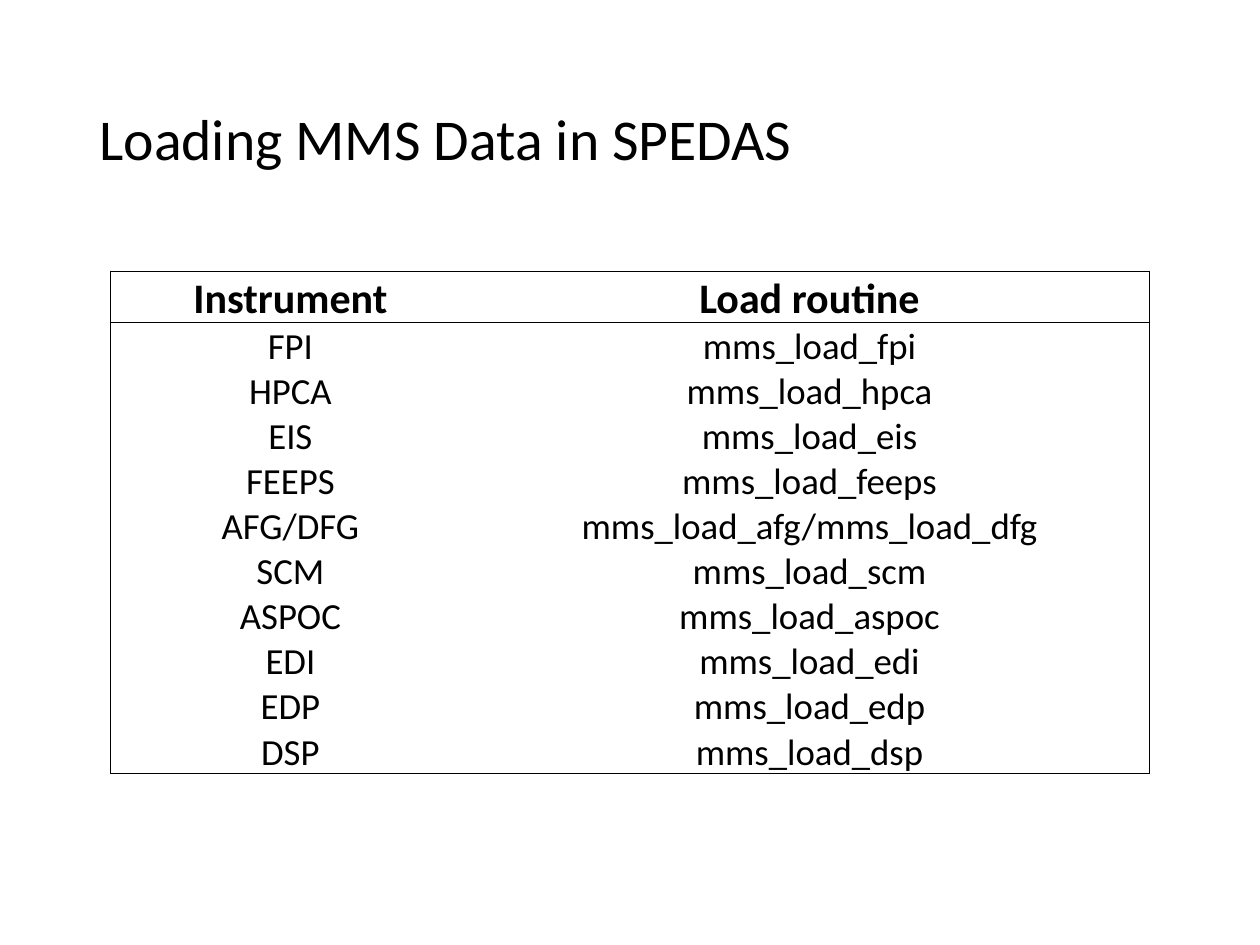
from lxml.etree import SubElement
from pptx import Presentation
from pptx.dml.color import RGBColor
from pptx.enum.text import MSO_ANCHOR as Anchor, PP_ALIGN as Align
from pptx.oxml import parse_xml
from pptx.oxml.ns import nsdecls, qn
from pptx.util import Inches, Pt

BLACK = RGBColor(0, 0, 0)
WHITE = RGBColor(255, 255, 255)
FONT = "Calibri"
GRID = Inches(0.1)
TITLE_BOX = (6.9, 4, 86.2, 14.5)
TABLE_BOX = (8.8, 21.5, 82.4, 39.9)
INSTRUMENT_WIDTH = 28.5
HEADER_HEIGHT = 4.1
HEADER = ("Instrument", "Load routine")
INSTRUMENTS = ("FPI", "HPCA", "EIS", "FEEPS", "AFG/DFG",
               "SCM", "ASPOC", "EDI", "EDP", "DSP")


def grid(units):
    """Turn a number of grid units into a length."""
    return round(units * GRID)


def load_routine(instrument):
    """Name the routine or routines that load an instrument."""
    return "/".join(f"mms_load_{name.lower()}" for name in instrument.split("/"))


def format_paragraph(paragraph, size, spacing, bold=False, align=Align.LEFT):
    """Set the spacing, alignment and font of a paragraph."""
    paragraph.line_spacing = spacing
    paragraph.alignment = align
    for run in paragraph.runs:
        run.font.name = FONT
        run.font.size = Pt(size)
        run.font.bold = bold
        run.font.color.rgb = BLACK


def set_borders(cell, visible):
    """Draw the visible sides of a cell and clear the others."""
    properties = cell._tc.get_or_add_tcPr()
    for index, side in enumerate("LRTB"):
        line = parse_xml(f'<a:ln{side} {nsdecls("a")} w="{Pt(0.5)}"/>')
        if side in visible:
            fill = SubElement(line, qn("a:solidFill"))
            SubElement(fill, qn("a:srgbClr"), val=str(BLACK))
        else:
            SubElement(line, qn("a:noFill"))
        properties.insert(index, line)


def add_title(slide, box, text):
    """Place the slide title in its box."""
    text_frame = slide.shapes.add_textbox(*map(grid, box)).text_frame
    text_frame.word_wrap = True
    text_frame.vertical_anchor = Anchor.MIDDLE
    text_frame.text = text
    format_paragraph(text_frame.paragraphs[0], 33, 0.9)


def fill_cell(cell, text, is_header, borders):
    """Write and format one table cell."""
    cell.text = text
    cell.vertical_anchor = Anchor.BOTTOM
    cell.margin_left = cell.margin_right = cell.margin_top = Inches(0.01)
    cell.margin_bottom = 0
    cell.fill.background()
    set_borders(cell, borders)
    format_paragraph(cell.text_frame.paragraphs[0], 24 if is_header else 21,
                     0.93, is_header, Align.CENTER)


def add_routine_table(slide, box):
    """Place the table of instruments and load routines in its box."""
    rows = [HEADER] + [(name, load_routine(name)) for name in INSTRUMENTS]
    width, height = box[2:]
    table = slide.shapes.add_table(len(rows), len(HEADER), *map(grid, box)).table
    table.first_row = table.horz_banding = False
    table.columns[0].width = grid(INSTRUMENT_WIDTH)
    table.columns[1].width = grid(width - INSTRUMENT_WIDTH)
    body_height = (height - HEADER_HEIGHT) / len(INSTRUMENTS)
    for row_index, row in enumerate(rows):
        is_header = row_index == 0
        table.rows[row_index].height = grid(HEADER_HEIGHT if is_header else body_height)
        horizontal = {0: "TB", 1: "T", len(rows) - 1: "B"}.get(row_index, "")
        for column_index, text in enumerate(row):
            fill_cell(table.cell(row_index, column_index), text, is_header,
                      "LR"[column_index] + horizontal)


def main():
    """Build the slide and save the presentation."""
    presentation = Presentation()
    presentation.slide_width, presentation.slide_height = grid(100), grid(75)
    slide = presentation.slides.add_slide(presentation.slide_layouts[6])
    slide.background.fill.solid()
    slide.background.fill.fore_color.rgb = WHITE
    add_title(slide, TITLE_BOX, "Loading MMS Data in SPEDAS")
    add_routine_table(slide, TABLE_BOX)
    presentation.save("out.pptx")


if __name__ == "__main__":
    main()
